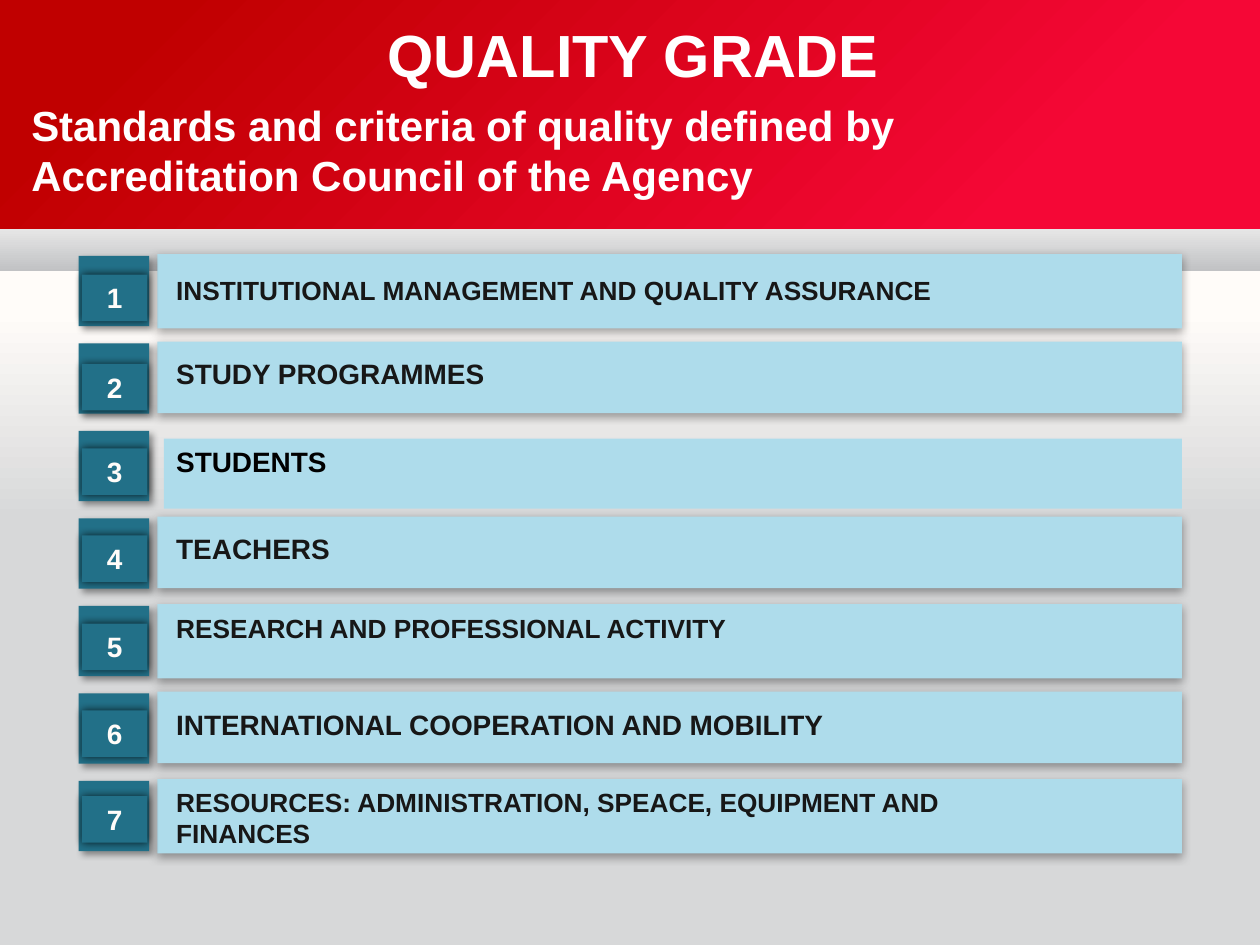
from copy import deepcopy

from lxml.etree import SubElement
from pptx import Presentation
from pptx.dml.color import RGBColor
from pptx.enum.shapes import MSO_SHAPE as SHAPE
from pptx.enum.text import MSO_ANCHOR as ANCHOR, PP_ALIGN as ALIGN
from pptx.oxml.ns import qn
from pptx.util import Pt

FONT = "Arial"
WHITE, INK, BLACK, CREAM = "FFFFFF", "171717", "000000", "FFFCF9"
SKY, TEAL = "AEDCEB", "227088"
BAR_SHADOW = (35, 5, 1.8, 90)
BADGE_SHADOW = (40, 4, 3, 45)
NUMBER_SHADOW = (75, 5, 0, 0)

PITCH = 50
BAR_LEFT, BAR_TOP, BAR_WIDTH = 90, 145.2, 585.4
LABEL_LEFT, LABEL_WIDTH = 93.6, 467.3
BADGE_LEFT, BADGE_TOP, BADGE_SIZE = 45, 146.2, 40.2
NUMBER_LEFT, NUMBER_WIDTH, NUMBER_HEIGHT = 46.8, 37.4, 26.6

STANDARDS = [
    ("INSTITUTIONAL MANAGEMENT AND QUALITY ASSURANCE", 15, 153.4, 157),
    ("STUDY PROGRAMMES", 16, 200.2, 208),
    ("STUDENTS", 16, 250.6, 256.3),
    ("TEACHERS", 16, 300.2, 306),
    ("RESEARCH AND PROFESSIONAL ACTIVITY", 15, 346.3, 356.4),
    ("INTERNATIONAL COOPERATION AND MOBILITY", 16, 401, 406),
    ("RESOURCES: ADMINISTRATION, SPEACE, EQUIPMENT AND FINANCES", 15, 445.7, 455),
]


def rgb(value):
    return RGBColor.from_string(value)


class Deck:
    def __init__(self, width, height):
        self.prs = Presentation()
        self.prs.slide_width, self.prs.slide_height = Pt(width), Pt(height)
        self.slide = self.prs.slides.add_slide(self.prs.slide_layouts[6])

    def gradient(self, owner, fill, stops, angle):
        fill.gradient()
        grad = next(owner.iter(qn("a:gradFill")))
        stop_list = grad.find(qn("a:gsLst"))
        while len(stop_list) < len(stops):
            stop_list.append(deepcopy(stop_list[0]))
        for stop, (position, color) in zip(fill.gradient_stops, stops):
            stop.position = position
            stop.color.rgb = rgb(color)
        grad.find(qn("a:lin")).set("ang", str(angle * 60000))

    def background(self, stops, angle):
        self.gradient(self.slide.element, self.slide.background.fill, stops, angle)

    def rect(self, left, top, width, height, color=None, shadow=None):
        sp = self.slide.shapes.add_shape(
            SHAPE.RECTANGLE, Pt(left), Pt(top), Pt(width), Pt(height))
        sp.shadow.inherit = False
        sp.line.fill.background()
        if color:
            sp.fill.solid()
            sp.fill.fore_color.rgb = rgb(color)
        if shadow:
            self.shadow(sp, *shadow)
        return sp

    def band(self, top, height, stops, angle):
        sp = self.rect(0, top, 720, height)
        self.gradient(sp.element, sp.fill, stops, angle)

    def shadow(self, sp, alpha, blur, distance, angle):
        effects = next(sp.element.iter(qn("a:effectLst")))
        outer = SubElement(effects, qn("a:outerShdw"), blurRad=str(Pt(blur)),
                           dist=str(Pt(distance)), dir=str(angle * 60000),
                           algn="ctr", rotWithShape="0")
        color = SubElement(outer, qn("a:srgbClr"), val=BLACK)
        SubElement(color, qn("a:alpha"), val=str(alpha * 1000))

    def label(self, sp, text, size, color, align=ALIGN.LEFT, anchor=ANCHOR.TOP):
        tf = sp.text_frame
        tf.word_wrap = True
        tf.vertical_anchor = anchor
        tf.text = text
        p = tf.paragraphs[0]
        p.alignment = align
        font = p.runs[0].font
        font.name, font.size, font.bold = FONT, Pt(size), True
        font.color.rgb = rgb(color)

    def text(self, left, top, width, height, text, size, color, **layout):
        box = self.slide.shapes.add_textbox(Pt(left), Pt(top), Pt(width), Pt(height))
        self.label(box, text, size, color, **layout)

    def standard(self, index, name, size, label_top, number_top):
        offset = index * PITCH
        if name == "STUDENTS":
            bar = self.rect(LABEL_LEFT, label_top, BAR_LEFT + BAR_WIDTH - LABEL_LEFT, 40, SKY)
            self.label(bar, name, size, BLACK)
        else:
            height = 42.5 if size == 15 else 41
            self.rect(BAR_LEFT, BAR_TOP + offset, BAR_WIDTH, height, SKY, BAR_SHADOW)
            self.text(LABEL_LEFT, label_top, LABEL_WIDTH, 40, name, size, INK)
        self.rect(BADGE_LEFT, BADGE_TOP + offset, BADGE_SIZE, BADGE_SIZE, TEAL, BADGE_SHADOW)
        number = self.rect(NUMBER_LEFT, number_top, NUMBER_WIDTH, NUMBER_HEIGHT,
                           TEAL, NUMBER_SHADOW)
        self.label(number, str(index + 1), 16, CREAM, align=ALIGN.CENTER)


def main():
    deck = Deck(720, 540)
    deck.background([(0.45, "D7D8D9"), (0.67, CREAM), (0.81, CREAM)], 270)
    deck.band(0, 154.8, [(0.11, "F50736"), (0.2, "F50736"), (0.89, "C00000")], 225)
    deck.band(131, 23.8, [(0, "C1C2C4"), (1, "E6E6E6")], 270)
    for index, row in enumerate(STANDARDS):
        deck.standard(index, *row)
    deck.text(9.4, 8.6, 704.9, 44.6, "QUALITY GRADE", 34, WHITE,
              align=ALIGN.CENTER, anchor=ANCHOR.MIDDLE)
    deck.text(10.8, 54, 511.2, 64,
              "Standards and criteria of quality defined by Accreditation Council of the Agency",
              24, WHITE, anchor=ANCHOR.BOTTOM)
    deck.prs.save("out.pptx")


if __name__ == "__main__":
    main()
